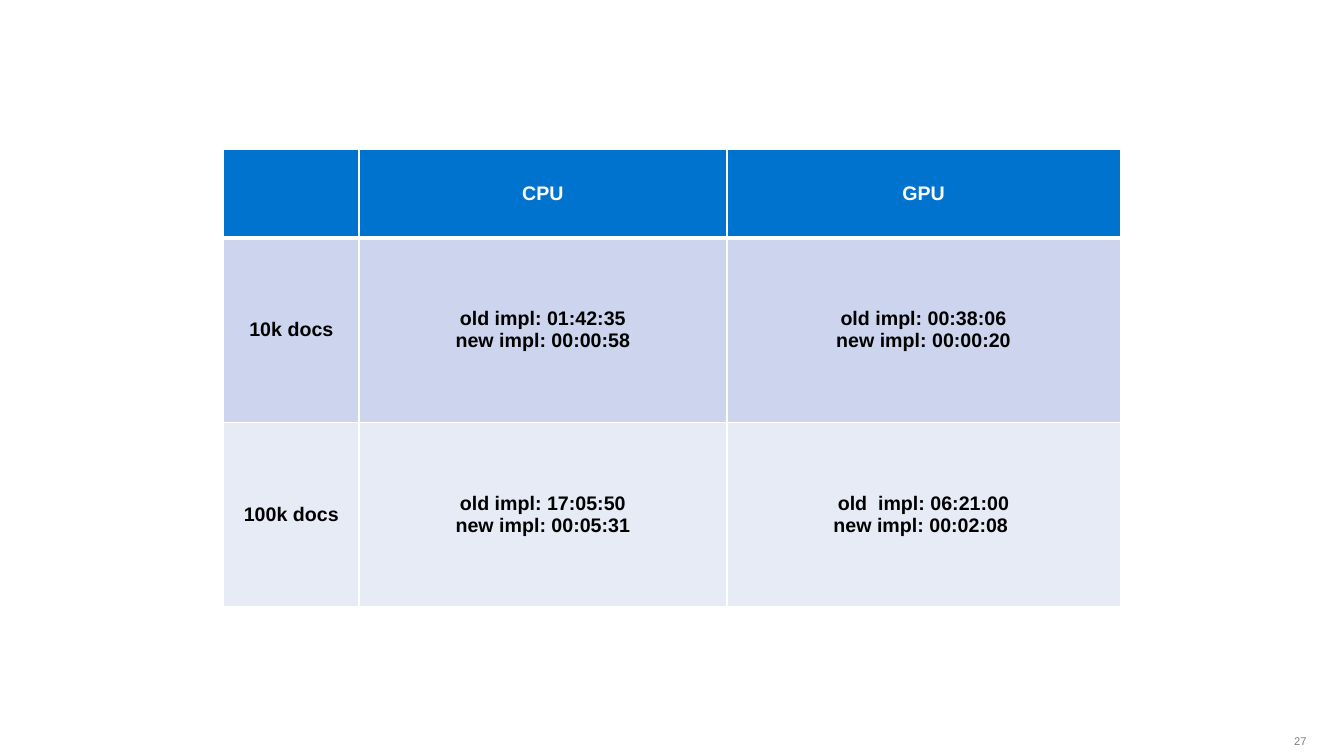
import pptx
import pptx.dml.color
import pptx.enum.text
import pptx.util
from lxml import etree
from pptx.oxml.ns import qn
from pptx.util import Inches

WHITE = "FFFFFF"
ROW_FILLS = ["0073CF", "CCD5ED", "E7EBF6"]
ROW_TEXT_COLORS = [WHITE, "000000", "000000"]
COLUMN_WIDTHS = [1.34, 3.65, 3.9]
ROW_HEIGHTS = [0.88, 1.83, 1.83]
TIMINGS = [
    ["", "CPU", "GPU"],
    ["10k docs", "old impl: 01:42:35\nnew impl: 00:00:58", "old impl: 00:38:06\nnew impl: 00:00:20"],
    ["100k docs", "old impl: 17:05:50\nnew impl: 00:05:31", "old  impl: 06:21:00\nnew impl: 00:02:08 "],
]


def format_text(paragraph, size, color, alignment, bold=False):
    paragraph.alignment = alignment
    for font in [paragraph.font] + [run.font for run in paragraph.runs]:
        font.name = "Arial"
        font.size = pptx.util.Pt(size)
        font.bold = bold
        font.color.rgb = pptx.dml.color.RGBColor.from_string(color)


def add_border(cell, side, width):
    line = etree.SubElement(cell._tc.get_or_add_tcPr(), qn(f"a:ln{side}"), w=str(pptx.util.Pt(width)))
    fill = etree.SubElement(line, qn("a:solidFill"))
    etree.SubElement(fill, qn("a:srgbClr"), val=WHITE)


presentation = pptx.Presentation()
presentation.slide_width = Inches(13.33)
presentation.slide_height = Inches(7.5)
slide = presentation.slides.add_slide(presentation.slide_layouts[6])

page_number = slide.shapes.add_textbox(Inches(12.6), Inches(7.19), Inches(0.36), Inches(0.32))
text_frame = page_number.text_frame
text_frame.word_wrap = True
text_frame.margin_right = 0
text_frame.vertical_anchor = pptx.enum.text.MSO_ANCHOR.MIDDLE
text_frame.text = "27"
format_text(text_frame.paragraphs[0], 8, "7F7F7F", pptx.enum.text.PP_ALIGN.RIGHT)

table = slide.shapes.add_table(
    len(ROW_HEIGHTS), len(COLUMN_WIDTHS), Inches(2.22), Inches(1.48),
    Inches(sum(COLUMN_WIDTHS)), Inches(sum(ROW_HEIGHTS)),
).table
for column, width in zip(table.columns, COLUMN_WIDTHS):
    column.width = Inches(width)

for row_index, row in enumerate(table.rows):
    row.height = Inches(ROW_HEIGHTS[row_index])
    for cell, text in zip(row.cells, TIMINGS[row_index]):
        for side in "LRTB":
            under_header = (row_index, side) in [(0, "B"), (1, "T")]
            add_border(cell, side, 3 if under_header else 1)
        cell.fill.solid()
        cell.fill.fore_color.rgb = pptx.dml.color.RGBColor.from_string(ROW_FILLS[row_index])
        cell.vertical_anchor = pptx.enum.text.MSO_ANCHOR.MIDDLE
        cell.text_frame.text = text
        for paragraph in cell.text_frame.paragraphs:
            format_text(paragraph, 14, ROW_TEXT_COLORS[row_index], pptx.enum.text.PP_ALIGN.CENTER, True)

presentation.save("out.pptx")
